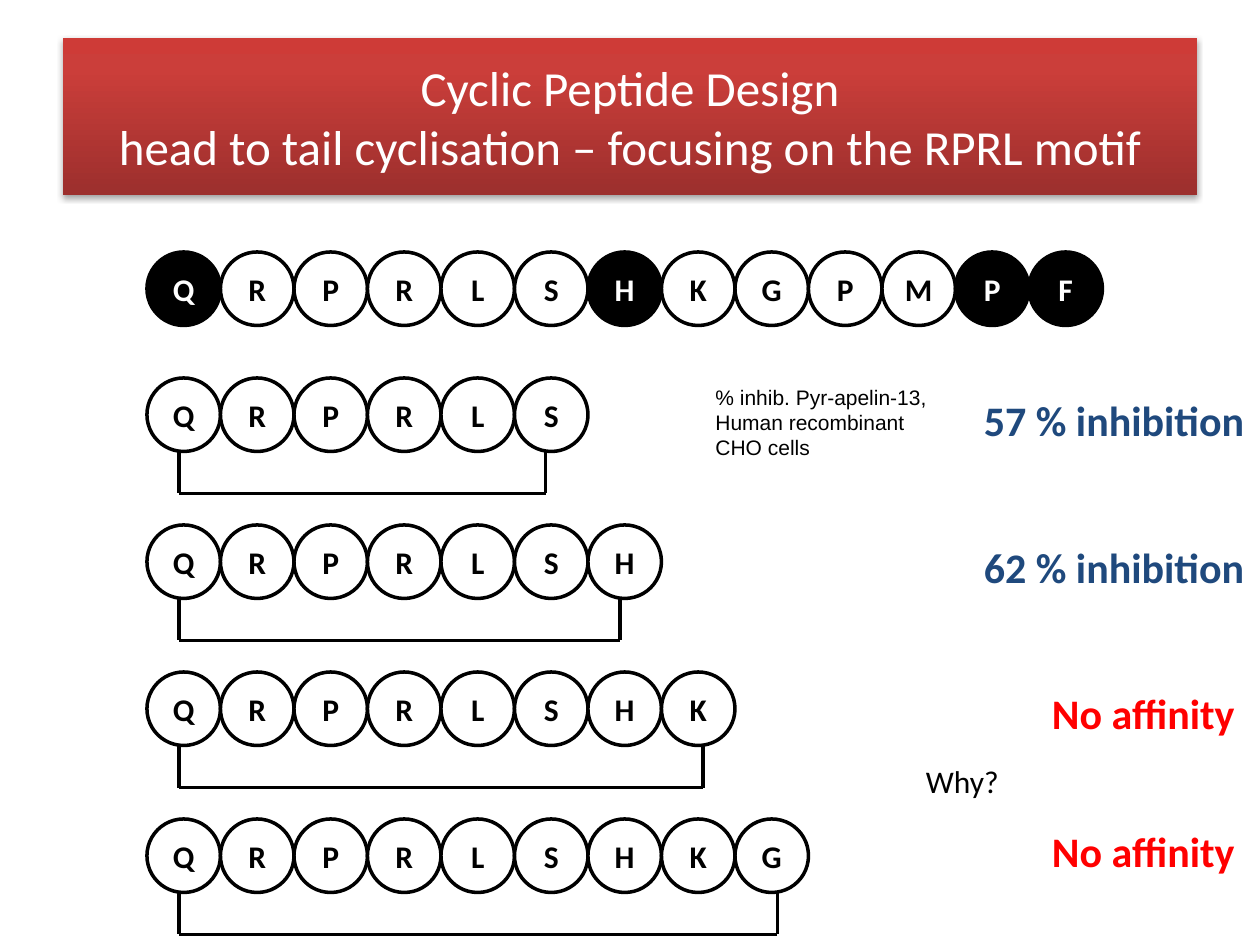
from dataclasses import dataclass

from lxml.etree import SubElement
from pptx import Presentation
from pptx.dml.color import RGBColor
from pptx.enum.shapes import MSO_CONNECTOR, MSO_SHAPE
from pptx.enum.text import MSO_ANCHOR, MSO_AUTO_SIZE, PP_ALIGN
from pptx.oxml.ns import qn
from pptx.util import Inches, Pt

BLACK, WHITE, BLUE, RED = "000000", "FFFFFF", "1F497D", "FF0000"
PITCH = 7 / 12       # residues touch, so this is also their diameter
CHAIN_LEFT = 7 / 6
RING_TOP, RING_STEP = 3, 7 / 6
BRACKET_LEFT, BRACKET_DROP = 1.42, 1 / 3


@dataclass
class Ring:
    residues: str
    bracket_right: float
    result: str
    result_left: float
    result_top: float
    color: str


@dataclass
class Note:
    lines: list[str]
    left: float
    top: float
    width: float
    height: float
    size: int
    color: str = BLACK
    font: str = "Calibri"
    bold: bool = False


RINGS = [
    Ring("QRPRLS", 4.33, "57 % inhibition", 7.71, 3.08, BLUE),
    Ring("QRPRLSH", 4.92, "62 % inhibition", 7.71, 4.25, BLUE),
    Ring("QRPRLSHK", 5.58, "No affinity", 8.25, 5.41, RED),
    Ring("QRPRLSHKG", 6.17, "No affinity", 8.25, 6.5, RED),
]


def rgb(color: str) -> RGBColor:
    return RGBColor.from_string(color)


def add_run(paragraph, text: str, size: int, color: str,
            font: str = "Calibri", bold: bool = False) -> None:
    run = paragraph.add_run()
    run.text = text
    run.font.size = Pt(size)
    run.font.name = font
    run.font.bold = bold
    run.font.color.rgb = rgb(color)


def add_title(shapes, lines: list[str]) -> None:
    banner = shapes.add_shape(MSO_SHAPE.RECTANGLE, Inches(0.5), Inches(0.3),
                              Inches(9), Inches(1.25))
    banner.line.fill.background()
    banner.shadow.inherit = False

    # Three-stop gradient, running upwards
    banner.fill.gradient()
    banner.fill.gradient_angle = 90
    properties = banner._element.spPr
    stops = properties.find(qn("a:gradFill")).find(qn("a:gsLst"))
    for stop in list(stops):
        stops.remove(stop)
    for percent, color in ((0, "9C2F2D"), (80, "CB3E3A"), (100, "CE3B37")):
        stop = SubElement(stops, qn("a:gs"), pos=str(percent * 1000))
        SubElement(stop, qn("a:srgbClr"), val=color)

    # Soft shadow below
    shadow = SubElement(properties.find(qn("a:effectLst")), qn("a:outerShdw"),
                        blurRad=str(Pt(3.1)), dist=str(Pt(1.8)),
                        dir="5400000", rotWithShape="0")
    shade = SubElement(shadow, qn("a:srgbClr"), val=BLACK)
    SubElement(shade, qn("a:alpha"), val="35000")

    frame = banner.text_frame
    frame.word_wrap = True
    frame.vertical_anchor = MSO_ANCHOR.MIDDLE
    paragraph = frame.paragraphs[0]
    paragraph.alignment = PP_ALIGN.CENTER
    for index, line in enumerate(lines):
        if index:
            paragraph.add_line_break()
        add_run(paragraph, line, 28, WHITE)


def add_chain(shapes, residues: str, top: float, filled: tuple[int, ...] = ()) -> None:
    for index, letter in enumerate(residues):
        fill, ink = (BLACK, WHITE) if index in filled else (WHITE, BLACK)
        residue = shapes.add_shape(MSO_SHAPE.OVAL, Inches(CHAIN_LEFT + index * PITCH),
                                   Inches(top), Inches(PITCH), Inches(PITCH))
        residue.shadow.inherit = False
        residue.fill.solid()
        residue.fill.fore_color.rgb = rgb(fill)
        residue.line.color.rgb = rgb(BLACK)
        residue.line.width = Pt(2)
        frame = residue.text_frame
        frame.word_wrap = False
        frame.vertical_anchor = MSO_ANCHOR.MIDDLE
        frame.paragraphs[0].alignment = PP_ALIGN.CENTER
        add_run(frame.paragraphs[0], letter, 18, ink, bold=True)


def add_line(shapes, x1: float, y1: float, x2: float, y2: float) -> None:
    line = shapes.add_connector(MSO_CONNECTOR.STRAIGHT, Inches(x1), Inches(y1),
                                Inches(x2), Inches(y2))
    line.line.color.rgb = rgb(BLACK)
    line.line.width = Pt(2)
    SubElement(line._element.spPr, qn("a:effectLst"))


def add_bracket(shapes, right: float, top: float) -> None:
    bottom = top + BRACKET_DROP
    for x in (BRACKET_LEFT, right):
        add_line(shapes, x, top, x, bottom)
    add_line(shapes, BRACKET_LEFT, bottom, right, bottom)


def add_note(shapes, note: Note) -> None:
    box = shapes.add_textbox(Inches(note.left), Inches(note.top),
                             Inches(note.width), Inches(note.height))
    frame = box.text_frame
    frame.word_wrap = False
    frame.auto_size = MSO_AUTO_SIZE.SHAPE_TO_FIT_TEXT
    for index, line in enumerate(note.lines):
        paragraph = frame.add_paragraph() if index else frame.paragraphs[0]
        add_run(paragraph, line, note.size, note.color, note.font, note.bold)


def main() -> None:
    deck = Presentation()
    deck.slide_width, deck.slide_height = Inches(10), Inches(7.5)
    shapes = deck.slides.add_slide(deck.slide_layouts[6]).shapes

    add_title(shapes, ["Cyclic Peptide Design",
                       "head to tail cyclisation – focusing on the RPRL motif"])

    # Full linear peptide
    add_chain(shapes, "QRPRLSHKGPMPF", 2, filled=(0, 6, 11, 12))

    # Cyclic peptides with their results
    for index, ring in enumerate(RINGS):
        top = RING_TOP + index * RING_STEP
        group = shapes.add_group_shape().shapes
        add_chain(group, ring.residues, top)
        add_bracket(group, ring.bracket_right, top + PITCH)
        width = 2.29 if ring.color == BLUE else 1.68
        add_note(shapes, Note([ring.result], ring.result_left, ring.result_top,
                              width, 0.5, 24, ring.color, bold=True))

    # Remarks
    add_note(shapes, Note(["Why?"], 7.25, 6, 0.79, 0.4, 18))
    add_note(shapes, Note(["% inhib. Pyr-apelin-13,", "Human recombinant", "CHO cells"],
                          5.58, 3, 1.89, 0.71, 12, font="Arial"))

    deck.save("out.pptx")


if __name__ == "__main__":
    main()
